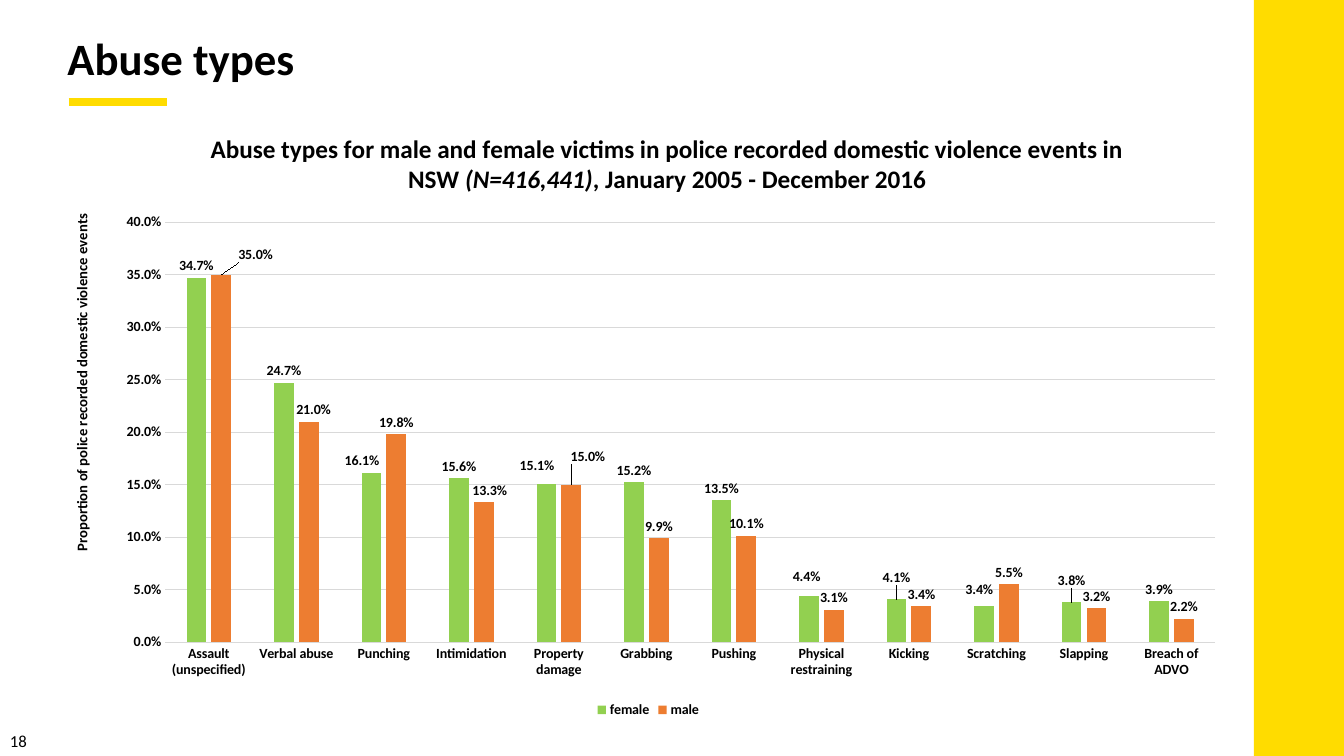
from dataclasses import dataclass

from lxml import etree
from pptx import Presentation
from pptx.chart.data import CategoryChartData
from pptx.dml.color import RGBColor
from pptx.enum.chart import (XL_CHART_TYPE, XL_LABEL_POSITION,
                             XL_LEGEND_POSITION, XL_TICK_MARK)
from pptx.enum.shapes import MSO_CONNECTOR, MSO_SHAPE
from pptx.oxml.ns import qn
from pptx.util import Cm, Pt

COLUMN = XL_CHART_TYPE.COLUMN_CLUSTERED
OUTSIDE = XL_LABEL_POSITION.OUTSIDE_END
BOTTOM = XL_LEGEND_POSITION.BOTTOM
NO_TICK = XL_TICK_MARK.NONE
STRAIGHT = MSO_CONNECTOR.STRAIGHT
RECT = MSO_SHAPE.RECTANGLE


@dataclass(frozen=True)
class Theme:
    font: str = "Calibri"
    ink: str = "000000"
    accent: str = "FFDC00"
    grid: str = "D9D9D9"
    female: str = "92D050"
    male: str = "ED7D31"
    head: float = 32
    title: float = 18
    number: float = 12
    axis: float = 10.5
    label: float = 10


THEME = Theme()
WIDE, HIGH = 33.87, 19.05

TYPES = ["Assault (unspecified)", "Verbal abuse", "Punching", "Intimidation",
         "Property damage", "Grabbing", "Pushing", "Physical restraining",
         "Kicking", "Scratching", "Slapping", "Breach of ADVO"]
# Name, colour, values, and label shifts as fractions of the chart size
SERIES = [
    ("female", THEME.female,
     [0.347, 0.247, 0.161, 0.156, 0.151, 0.152,
      0.135, 0.044, 0.041, 0.034, 0.038, 0.039],
     {2: (-0.008, 0), 4: (-0.008, -0.01), 7: (-0.002, -0.012),
      8: (0, -0.016), 9: (-0.004, -0.008), 10: (0, -0.016)}),
    ("male", THEME.male,
     [0.35, 0.21, 0.198, 0.133, 0.15, 0.099,
      0.101, 0.031, 0.034, 0.055, 0.032, 0.022],
     {0: (0.029, -0.013), 1: (0.004, 0), 3: (0.005, 0), 4: (0.014, -0.026)}),
]


def style(font, size, bold=False, italic=False):
    font.name, font.size = THEME.font, Pt(size)
    font.bold, font.italic = bold, italic
    font.color.rgb = RGBColor.from_string(THEME.ink)


def write(frame, *texts, size, bold=False, italics=()):
    """Put the texts in one paragraph; italics lists the slanted ones."""
    para = frame.paragraphs[0]
    for text in texts:
        run = para.add_run()
        run.text = text
        style(run.font, size, bold, text in italics)


def label(slide, box, text, wrap=True, **form):
    frame = slide.shapes.add_textbox(*map(Cm, box)).text_frame
    frame.word_wrap = wrap
    write(frame, text, **form)


def place(node, index, **parts):
    """Give a chart part a manual layout at the given child index."""
    for old in node.xpath("c:layout"):
        node.remove(old)
    layout = etree.Element(qn("c:layout"))
    manual = etree.SubElement(layout, qn("c:manualLayout"))
    for name, value in parts.items():
        etree.SubElement(manual, qn("c:" + name)).set("val", str(value))
    node.insert(index, layout)


def band(slide, box):
    bar = slide.shapes.add_shape(RECT, *map(Cm, box))
    bar.shadow.inherit = False
    bar.fill.solid()
    bar.fill.fore_color.rgb = RGBColor.from_string(THEME.accent)
    bar.line.fill.background()


def header(slide, box):
    left, top, _, _ = box
    label(slide, box, "Abuse types", size=THEME.head, bold=True)
    x, y = left + 0.28, top + 1.93
    rule = slide.shapes.add_connector(
        STRAIGHT, Cm(x), Cm(y), Cm(x + 2.49), Cm(y))
    rule.line.color.rgb = RGBColor.from_string(THEME.accent)
    rule.line.width = Pt(6)
    etree.SubElement(rule.element.spPr, qn("a:effectLst"))


def axes(chart):
    grey = RGBColor.from_string(THEME.grid)
    cats, vals = chart.category_axis, chart.value_axis
    for axis in (cats, vals):
        axis.major_tick_mark = axis.minor_tick_mark = NO_TICK
        style(axis.tick_labels.font, THEME.label, True)
    vals.has_major_gridlines = True
    for line in (cats.format.line, vals.major_gridlines.format.line):
        line.color.rgb = grey
        line.width = Pt(0.75)
    vals.format.line.fill.background()
    vals.minimum_scale, vals.maximum_scale, vals.major_unit = 0, 0.4, 0.05
    vals.tick_labels.number_format = "0.0%"
    vals.tick_labels.number_format_is_linked = False
    vals.has_title = True
    write(vals.axis_title.text_frame,
          "Proportion of police recorded domestic violence events",
          size=THEME.axis, bold=True)
    node = chart.element.xpath(".//c:valAx/c:title")[0]
    body = node.xpath(".//a:bodyPr")[0]
    body.set("rot", "-5400000")
    body.set("vert", "horz")
    place(node, 1, xMode="edge", yMode="edge", x=0.01, y=0.16)


def bars(plot):
    plot.gap_width, plot.overlap = 219, -27
    plot.vary_by_categories = False
    for series, (_, color, _, shifts) in zip(plot.series, SERIES):
        series.format.fill.solid()
        series.format.fill.fore_color.rgb = RGBColor.from_string(color)
        series.invert_if_negative = False
        tags = series.data_labels
        tags.show_value, tags.position = True, OUTSIDE
        tags.number_format, tags.number_format_is_linked = "0.0%", False
        style(tags.font, THEME.label, True)
        for index in shifts:
            tag = series.points[index].data_label
            style(tag.font, THEME.label, True)
            tag.position = OUTSIDE


def shift(chart):
    """Move the point labels that would otherwise collide."""
    for node, (_, _, _, shifts) in zip(chart.element.xpath(".//c:ser"), SERIES):
        for tag in node.xpath("./c:dLbls/c:dLbl"):
            x, y = shifts[int(tag.xpath("c:idx")[0].get("val"))]
            place(tag, 1, x=x, y=y)


def graph(slide, box):
    data = CategoryChartData(number_format="0.0%")
    data.categories = TYPES
    for name, _, values, _ in SERIES:
        data.add_series(name, values)
    chart = slide.shapes.add_chart(COLUMN, *map(Cm, box), data).chart
    style(chart.font, THEME.label)
    chart.has_title = True
    count = "(N=416,441)"
    write(chart.chart_title.text_frame,
          "Abuse types for male and female victims in police recorded "
          "domestic violence events in NSW ", count,
          ", January 2005 - December 2016",
          size=THEME.title, bold=True, italics=(count,))
    place(chart.element.xpath("c:chart/c:title")[0], 1,
          xMode="edge", yMode="edge", x=0.127, y=0.025)
    chart.has_legend = True
    chart.legend.position = BOTTOM
    chart.legend.include_in_layout = False
    style(chart.legend.font, THEME.label, True)
    axes(chart)
    bars(chart.plots[0])
    shift(chart)
    place(chart.element.xpath(".//c:plotArea")[0], 0, layoutTarget="inner",
          xMode="edge", yMode="edge", x=0.091, y=0.178, w=0.889, h=0.691)


def main():
    deck = Presentation()
    deck.slide_width, deck.slide_height = Cm(WIDE), Cm(HIGH)
    slide = deck.slides.add_slide(deck.slide_layouts[6])
    band(slide, (WIDE - 2.27, 0, 2.27, HIGH))
    header(slide, (1.45, 0.64, 31.78, 1.63))
    graph(slide, (1.45, 2.87, 29.77, 15.32))
    label(slide, (0, 18.29, 0.94, 0.76), "18", wrap=False, size=THEME.number)
    deck.save("out.pptx")


if __name__ == "__main__":
    main()
